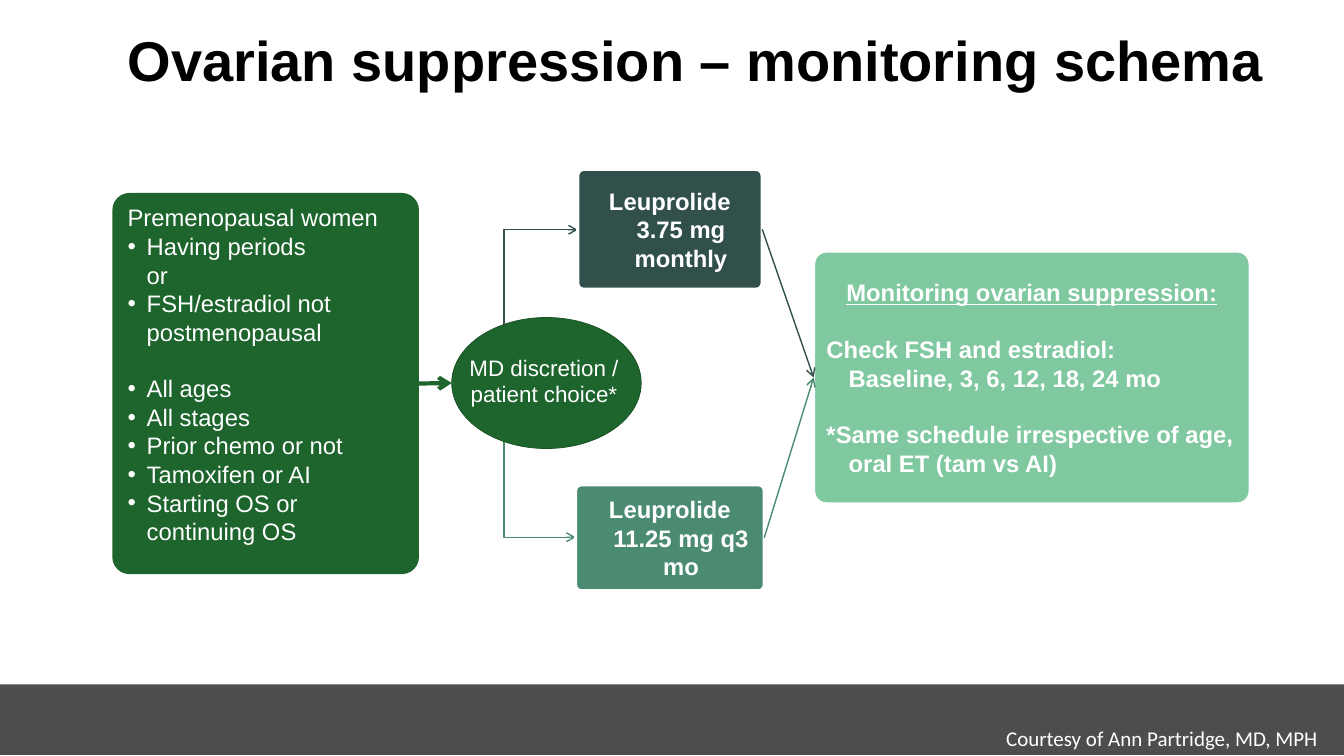
from lxml.etree import SubElement
from pptx import Presentation
from pptx.dml.color import RGBColor
from pptx.enum.shapes import MSO_CONNECTOR, MSO_SHAPE
from pptx.enum.text import MSO_ANCHOR, PP_ALIGN
from pptx.oxml.ns import qn
from pptx.util import Inches, Pt

GREEN, SLATE, TEAL, MINT = "1D642D", "31504C", "4A8B72", "7FC8A0"
WHITE, BLACK, GREY, RIM = "FFFFFF", "000000", "4D4D4F", "185024"
CENTER, LEFT = PP_ALIGN.CENTER, PP_ALIGN.LEFT


def rgb(value):
    return RGBColor.from_string(value)


class SchemaSlide:
    """Holds the text style and the slide being built."""
    font, size, gap = "Arial", 17, 20

    def __init__(self, prs):
        self.slide = prs.slides.add_slide(prs.slide_layouts[5])
        self.shapes = self.slide.shapes

    def run(self, p, text, size=None, color=WHITE, bold=False, underline=None, font=None):
        r = p.add_run()
        r.text = text
        f = r.font
        f.name, f.size = font or self.font, Pt(size or self.size)
        f.bold, f.underline = bold, underline
        f.color.rgb = rgb(color)

    def paragraph(self, tf, lines, align=LEFT, indent=0, hang=0, bullet=False,
                  gap=False, **style):
        p = tf.paragraphs[0]
        if p.runs:
            p = tf.add_paragraph()
        p.alignment = align
        if gap:
            p.space_before = Pt(self.gap)
        pPr = p._p.get_or_add_pPr()
        pPr.set("marL", str(Inches(indent)))
        pPr.set("indent", str(-Inches(hang)))
        if bullet:
            SubElement(pPr, qn("a:buFont"), typeface="Arial")
            SubElement(pPr, qn("a:buChar"), char="•")
        for i, line in enumerate(lines.split("\n")):
            if i:
                p.add_line_break()
            self.run(p, line, **style)

    def title(self, text, x, y, w, h):
        sp = self.shapes.title
        sp.left, sp.top, sp.width, sp.height = map(Inches, (x, y, w, h))
        tf = sp.text_frame
        tf.word_wrap, tf.vertical_anchor = True, MSO_ANCHOR.TOP
        tf.margin_left = tf.margin_right = Inches(0.05)
        self.paragraph(tf, text, CENTER, size=40, color=BLACK, bold=True)
        tf.paragraphs[0].line_spacing = 0.9

    def shape(self, kind, x, y, w, h, fill, line=None, width=1.0):
        sp = self.shapes.add_shape(kind, *map(Inches, (x, y, w, h)))
        sp.shadow.inherit = False
        sp.fill.solid()
        sp.fill.fore_color.rgb = rgb(fill)
        if line:
            sp.line.color.rgb = rgb(line)
            sp.line.width = Pt(width)
        else:
            sp.line.fill.background()
        return sp

    def box(self, x, y, w, h, fill, line=WHITE, anchor=MSO_ANCHOR.MIDDLE):
        sp = self.shape(MSO_SHAPE.ROUNDED_RECTANGLE, x, y, w, h, fill, line, 2.25)
        sp.adjustments[0] = 0.051
        tf = sp.text_frame
        tf.word_wrap, tf.vertical_anchor = True, anchor
        tf.margin_left = tf.margin_right = Inches(0.09)
        tf.margin_top = tf.margin_bottom = Inches(0.04)
        return sp

    def label(self, text, x, y, w, h, align=LEFT, **style):
        tf = self.shapes.add_textbox(*map(Inches, (x, y, w, h))).text_frame
        tf.word_wrap = True
        self.paragraph(tf, text, align, **style)

    def arrow(self, start, end, color, width=1.0, kind=MSO_CONNECTOR.STRAIGHT):
        cxn = self.shapes.add_connector(kind, *map(Inches, start + end))
        cxn.line.color.rgb = rgb(color)
        cxn.line.width = Pt(width)
        SubElement(cxn.line._get_or_add_ln(), qn("a:tailEnd"), type="arrow")
        SubElement(cxn._element.spPr, qn("a:effectLst"))
        return cxn

    def elbow(self, start, end, color):
        """Runs vertically, then right: a two-part elbow turned a quarter."""
        (x1, y1), (x2, y2) = start, end
        cx, cy = (x1 + x2) / 2, (y1 + y2) / 2
        half_w, half_h = abs(y2 - y1) / 2, (x2 - x1) / 2
        if y2 < y1:
            half_h, turn = -half_h, 90
        else:
            turn = 270
        cxn = self.arrow((cx + half_w, cy - half_h), (cx - half_w, cy + half_h),
                         color, kind=MSO_CONNECTOR.ELBOW)
        spPr = cxn._element.spPr
        spPr.find(qn("a:xfrm")).set("rot", str(turn * 60000))
        spPr.find(qn("a:prstGeom")).set("prst", "bentConnector2")


def main():
    prs = Presentation()
    prs.slide_width, prs.slide_height = Inches(13.33), Inches(7.5)
    s = SchemaSlide(prs)

    # Footer band and title
    s.shape(MSO_SHAPE.RECTANGLE, 0, 6.79, 13.33, 0.7, GREY)
    s.label("Courtesy of Ann Partridge, MD, MPH", 9.88, 7.15, 3.31, 0.35,
            size=15, font="Calibri")
    s.title("Ovarian suppression – monitoring schema", 1.13, 0.28, 11.53, 0.89)

    # Branches from the decision to each dose
    s.elbow((5, 3.46), (5.73, 2.28), SLATE)
    s.elbow((5, 4.23), (5.71, 5.33), TEAL)

    # Patient group
    patients = s.box(1.13, 1.93, 3.01, 3.75, GREEN, GREEN, MSO_ANCHOR.TOP)
    tf = patients.text_frame
    s.paragraph(tf, "Premenopausal women")
    for text, bullet, gap in (
            ("Having periods", True, False),
            ("or", False, False),
            ("FSH/estradiol not postmenopausal", True, False),
            ("All ages", True, True),
            ("All stages", True, False),
            ("Prior chemo or not", True, False),
            ("Tamoxifen or AI", True, False),
            ("Starting OS or continuing OS", True, False)):
        s.paragraph(tf, text, indent=0.19, hang=0.19 if bullet else 0,
                    bullet=bullet, gap=gap)

    # Monitoring plan
    monitoring = s.box(8.07, 2.49, 4.33, 2.51, MINT)
    tf = monitoring.text_frame
    hanging = {"indent": 0.22, "hang": 0.22, "bold": True}
    s.paragraph(tf, "Monitoring ovarian suppression:", CENTER, underline=True, **hanging)
    s.paragraph(tf, "Check FSH and estradiol:\nBaseline, 3, 6, 12, 18, 24 mo",
                gap=True, **hanging)
    s.paragraph(tf, "*Same schedule irrespective of age, oral ET (tam vs AI)",
                gap=True, **hanging)

    # Doses, each leading to the monitoring plan
    for text, place, color in (
            ("Leuprolide 3.75 mg monthly", (5.73, 1.68, 1.83, 1.19), SLATE),
            ("Leuprolide 11.25 mg q3 mo", (5.71, 4.81, 1.87, 1.05), TEAL)):
        dose = s.box(*place, color)
        s.paragraph(dose.text_frame, text, CENTER, **hanging)
        x, y, w, h = place
        cxn = s.arrow((x + w, y + h / 2), (8.07, 3.75), color)
        cxn.begin_connect(dose, 3)
        cxn.end_connect(monitoring, 1)

    # Decision
    cxn = s.arrow((4.14, 3.8), (4.48, 3.8), GREEN, 3)
    cxn.begin_connect(patients, 3)
    s.shape(MSO_SHAPE.OVAL, 4.48, 3.15, 1.88, 1.3, GREEN, RIM, 0.5)
    s.label("MD discretion / patient choice*", 4.42, 3.46, 1.95, 0.91, CENTER, size=16)

    prs.save("out.pptx")


if __name__ == "__main__":
    main()
